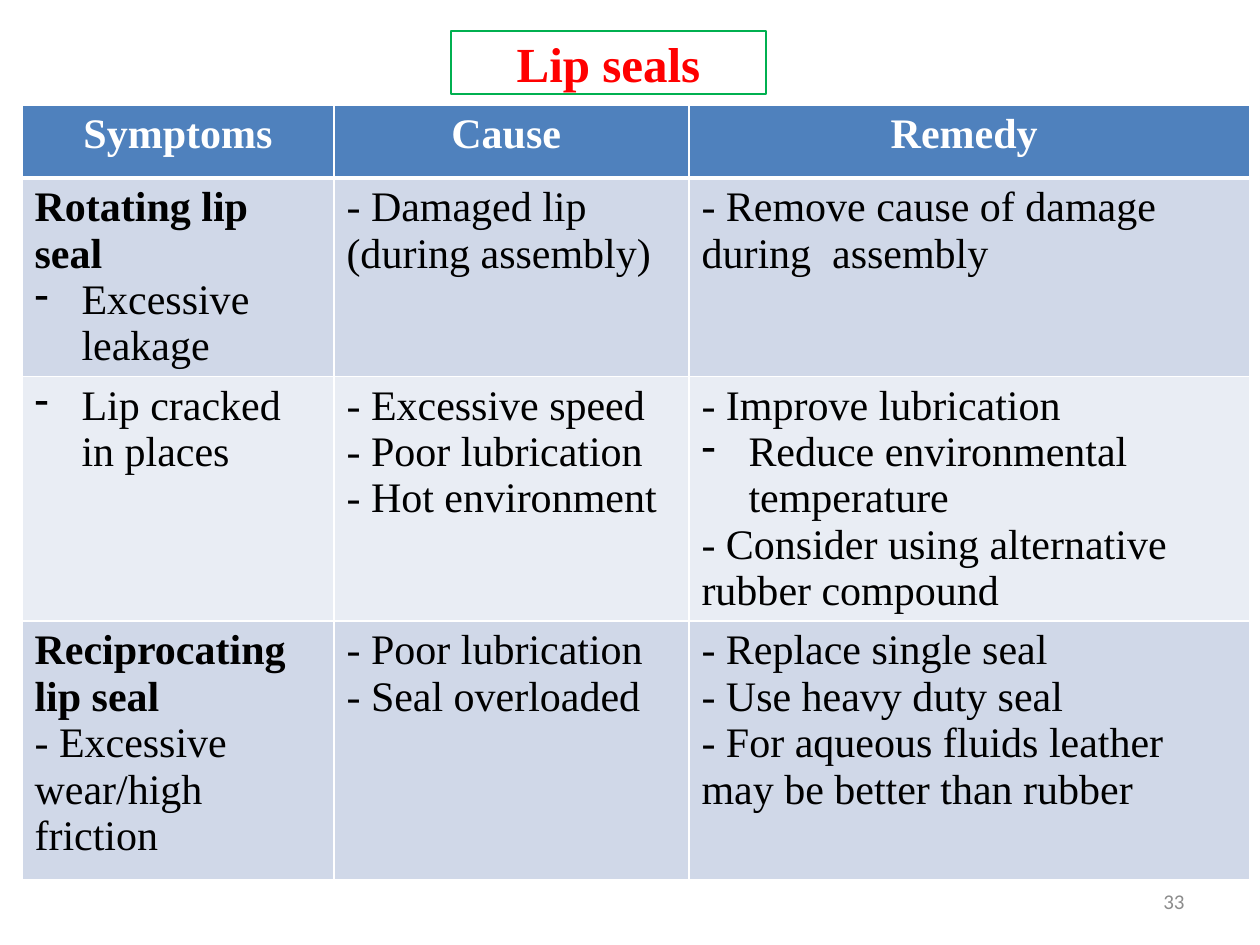
import pptx
import pptx.dml.color
import pptx.enum.text
import pptx.oxml.ns
import pptx.util
import lxml.etree

THEME = {
    "font": "Times New Roman", "number_font": "Calibri",
    "title": "FF0000", "frame": "00B050", "number": "8C8C8C",
    "header": "4F81BD", "bands": ["D0D8E8", "E9EDF4"],
    "white": "FFFFFF", "text": "000000",
    "title_size": 28, "table_size": 24, "number_size": 12,
}
ALIGN = pptx.enum.text.PP_ALIGN
MIDDLE = pptx.enum.text.MSO_ANCHOR.MIDDLE
qn = pptx.oxml.ns.qn
color = pptx.dml.color.RGBColor.from_string


def px(count):
    return pptx.util.Emu(round(count * 914400 / 126))


def add_run(paragraph, text, size, tint, bold=False, font=THEME["font"]):
    run = paragraph.add_run()
    run.text = text
    run.font.name = font
    run.font.size = pptx.util.Pt(size)
    run.font.bold = bold
    run.font.color.rgb = color(tint)


presentation = pptx.Presentation()
presentation.slide_width, presentation.slide_height = px(1260), px(945)
slide = presentation.slides.add_slide(presentation.slide_layouts[5])

# Framed title
title = slide.shapes.title
title.left, title.top, title.width, title.height = px(451), px(31), px(315), px(63)
title.line.color.rgb = color(THEME["frame"])
title.line.width = pptx.util.Pt(0.75)
title.text_frame.auto_size = pptx.enum.text.MSO_AUTO_SIZE.NONE
title.text_frame.vertical_anchor = MIDDLE
paragraph = title.text_frame.paragraphs[0]
paragraph.alignment = ALIGN.CENTER
add_run(paragraph, "Lip seals", THEME["title_size"], THEME["title"], True)

# Table text: each paragraph is (style, text)
rows = [
    [[("header", "Symptoms")], [("header", "Cause ")], [("header", "Remedy ")]],
    [
        [("bold", "Rotating lip seal"), ("bullet", "Excessive leakage")],
        [("plain", "- Damaged lip (during assembly)")],
        [("plain", "- Remove cause of damage during  assembly")],
    ],
    [
        [("bullet", "Lip cracked in places")],
        [("plain", "- Excessive speed"), ("plain", "- Poor lubrication"),
         ("plain", "- Hot environment")],
        [("plain", "- Improve lubrication"),
         ("bullet", "Reduce environmental temperature"),
         ("plain", "- Consider using alternative rubber compound")],
    ],
    [
        [("bold", "Reciprocating lip seal"), ("plain", "- Excessive wear/high"),
         ("plain", "friction")],
        [("plain", "- Poor lubrication"), ("plain", "- Seal overloaded")],
        [("plain", "- Replace single seal"), ("plain", "- Use heavy duty seal"),
         ("plain", "- For aqueous fluids leather may be better than rubber")],
    ],
]
column_widths = [312, 355, 561]
row_heights = [73, 150, 210, 259]

# Table grid
table = slide.shapes.add_table(
    len(rows), len(column_widths), px(22), px(105),
    px(sum(column_widths)), px(sum(row_heights))).table
for column, width in zip(table.columns, column_widths):
    column.width = px(width)
for row, height in zip(table.rows, row_heights):
    row.height = px(height)

# Table cells
for row_index, row in enumerate(rows):
    for column_index, paragraphs in enumerate(row):
        cell = table.cell(row_index, column_index)

        # White borders, thicker under the header
        properties = cell._tc.get_or_add_tcPr()
        widths = {"lnL": 1, "lnR": 1, "lnT": 3 if row_index == 1 else 1,
                  "lnB": 3 if row_index == 0 else 1}
        for side, width in widths.items():
            border = lxml.etree.SubElement(
                properties, qn("a:" + side), w=str(pptx.util.Pt(width)))
            fill = lxml.etree.SubElement(border, qn("a:solidFill"))
            lxml.etree.SubElement(fill, qn("a:srgbClr"), val=THEME["white"])

        cell.fill.solid()
        cell.fill.fore_color.rgb = color(
            THEME["bands"][(row_index - 1) % 2] if row_index else THEME["header"])

        for index, (style, text) in enumerate(paragraphs):
            frame = cell.text_frame
            paragraph = frame.add_paragraph() if index else frame.paragraphs[0]
            if style == "header":
                paragraph.alignment = ALIGN.CENTER
            if style == "bullet":
                layout = paragraph._p.get_or_add_pPr()
                layout.set("marL", str(px(47)))
                layout.set("indent", str(-px(47)))
                lxml.etree.SubElement(layout, qn("a:buChar"), char="-")
            add_run(paragraph, text, THEME["table_size"],
                    THEME["white"] if style == "header" else THEME["text"],
                    style in ("header", "bold"))

# Slide number
number = slide.shapes.add_textbox(px(903), px(876), px(294), px(50))
number.text_frame.word_wrap = True
number.text_frame.vertical_anchor = MIDDLE
paragraph = number.text_frame.paragraphs[0]
paragraph.alignment = ALIGN.RIGHT
add_run(paragraph, "33", THEME["number_size"], THEME["number"],
        font=THEME["number_font"])

presentation.save("out.pptx")
